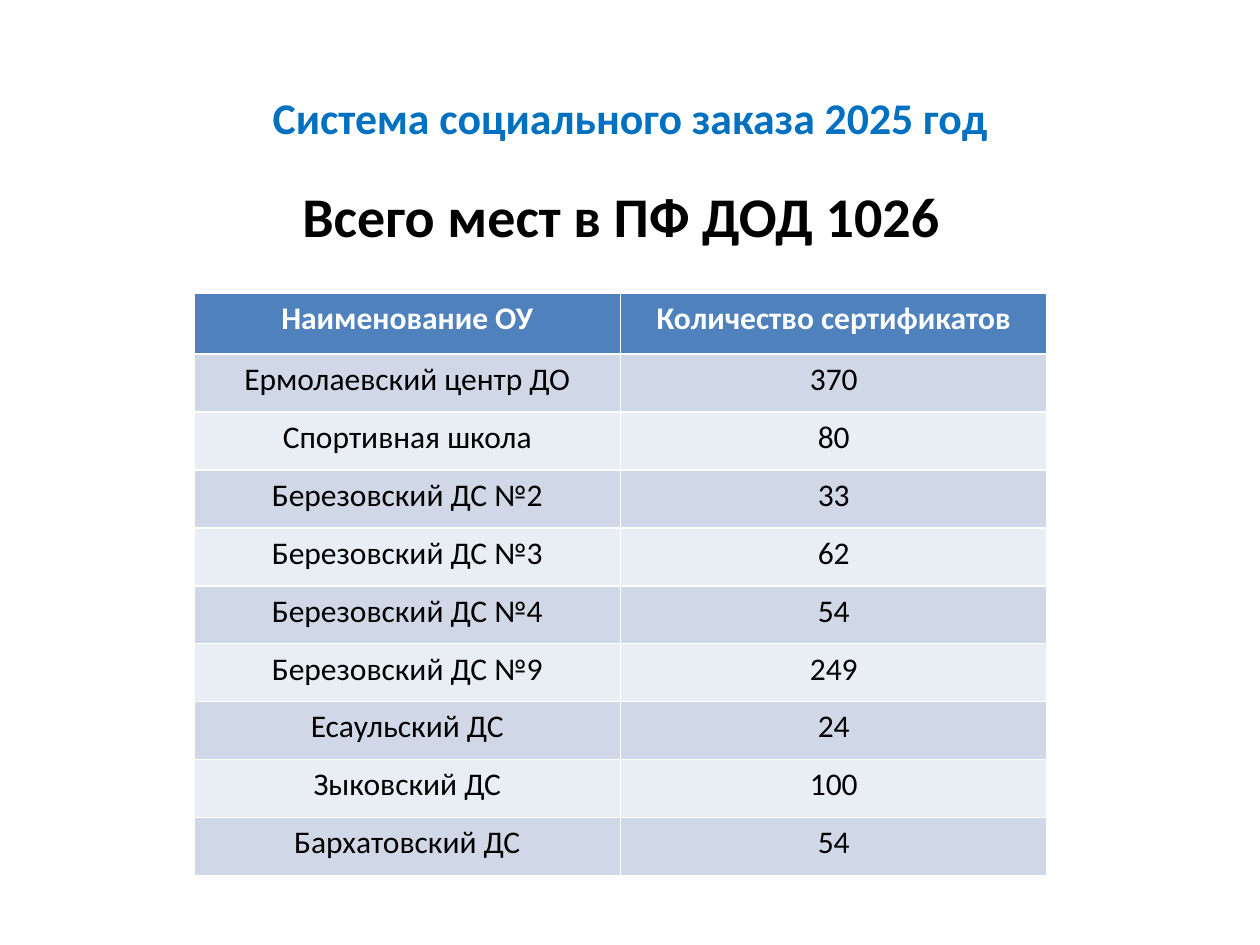
from lxml import etree
from pptx import Presentation
from pptx.dml.color import RGBColor
from pptx.enum.text import MSO_ANCHOR, PP_ALIGN
from pptx.oxml.ns import qn
from pptx.util import Inches, Pt

BLUE = RGBColor(0x00, 0x70, 0xC0)
BLACK = RGBColor(0x00, 0x00, 0x00)
WHITE = RGBColor(0xFF, 0xFF, 0xFF)
HEADER_FILL = RGBColor(0x4F, 0x81, 0xBD)
BAND_FILLS = [RGBColor(0xE9, 0xED, 0xF4), RGBColor(0xD0, 0xD8, 0xE8)]

ROWS = [
    ("Наименование ОУ", "Количество сертификатов"),
    ("Ермолаевский центр ДО", "370"),
    ("Спортивная школа", "80"),
    ("Березовский ДС №2", "33"),
    ("Березовский ДС №3", "62"),
    ("Березовский ДС №4", "54"),
    ("Березовский ДС №9", "249"),
    ("Есаульский ДС", "24"),
    ("Зыковский ДС", "100"),
    ("Бархатовский ДС", "54"),
]


def place(shape, left, top, width, height):
    shape.left, shape.top = Inches(left), Inches(top)
    shape.width, shape.height = Inches(width), Inches(height)


def write(paragraph, text, size, color, bold):
    paragraph.alignment = PP_ALIGN.CENTER
    run = paragraph.add_run()
    run.text = text
    run.font.name = "Calibri"
    run.font.size = Pt(size)
    run.font.bold = bold
    run.font.color.rgb = color


prs = Presentation()
prs.slide_width, prs.slide_height = Inches(10), Inches(7.5)
slide = prs.slides.add_slide(prs.slide_layouts[1])

# Title
title = slide.shapes.title
place(title, 0.5, 0.3, 9, 1.25)
title.text_frame.vertical_anchor = MSO_ANCHOR.MIDDLE
write(title.text_frame.paragraphs[0], "Система социального заказа 2025 год", 25, BLUE, True)

# Total number of places, without a bullet
total = slide.placeholders[1]
place(total, 0.43, 1.39, 9, 0.74)
total_line = total.text_frame.paragraphs[0]
total_line.space_before = Pt(0)
total_format = total_line._p.get_or_add_pPr()
total_format.set("marL", "0")
total_format.set("indent", "0")
etree.SubElement(total_format, qn("a:buNone"))
write(total_line, "Всего мест в ПФ ДОД 1026", 32, BLACK, True)

# Certificates by institution; white rules come from the table style
certificates = slide.shapes.add_table(
    len(ROWS), 2, Inches(1.54), Inches(2.33), Inches(6.77), Inches(4.65)
).table
for column in certificates.columns:
    column.width = Inches(3.385)
for i, values in enumerate(ROWS):
    header = i == 0
    certificates.rows[i].height = Inches(0.48 if header else 0.46)
    for cell, value in zip(certificates.rows[i].cells, values):
        cell.fill.solid()
        cell.fill.fore_color.rgb = HEADER_FILL if header else BAND_FILLS[i % 2]
        write(cell.text_frame.paragraphs[0], value, 18, WHITE if header else BLACK, header)

prs.save("out.pptx")
